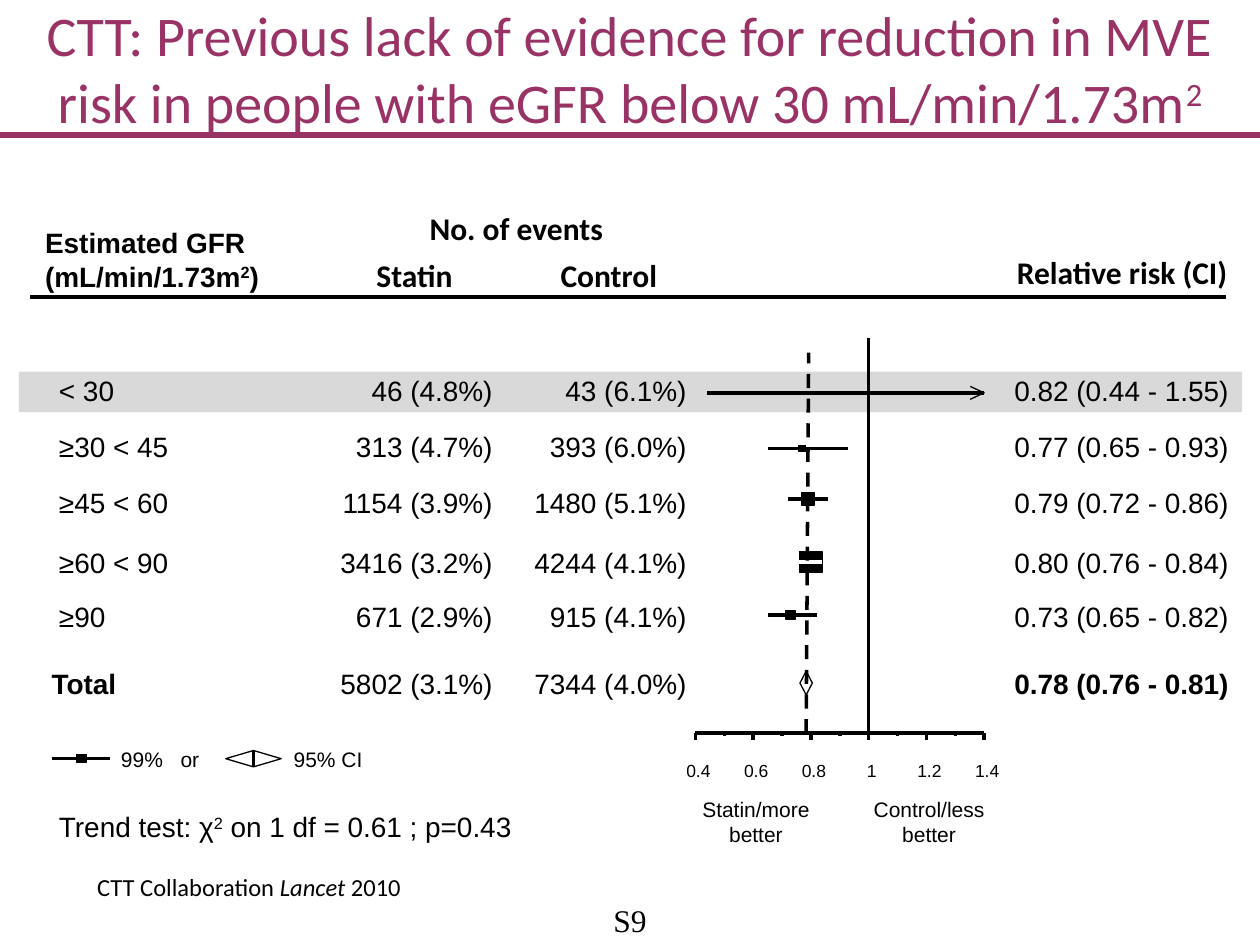
from collections import namedtuple

from lxml import etree
from pptx import Presentation
from pptx import util as u
from pptx.dml.color import RGBColor
from pptx.enum import dml, shapes, text
from pptx.oxml import ns

BLACK = RGBColor(0, 0, 0)
WHITE = RGBColor(0xFF, 0xFF, 0xFF)
PLUM = RGBColor(0x99, 0x33, 0x66)
GREY = RGBColor(0xD9, 0xD9, 0xD9)
LEFT, CENTER, RIGHT = text.PP_ALIGN.LEFT, text.PP_ALIGN.CENTER, text.PP_ALIGN.RIGHT

Box = namedtuple("Box", "x y w h")  # centimetres
# y is the text top within the table, mark_y the estimate's centre within the plot
Row = namedtuple("Row", "label statin control y rr low high mark_y mark")

ROWS = [
    Row("< 30", "46 (4.8%)", "43 (6.1%)", 0.05, 0.82, 0.44, 1.55, 1.11, (0.01, 0.05)),
    Row("≥30 < 45", "313 (4.7%)", "393 (6.0%)", 1.17, 0.77, 0.65, 0.93, 2.23, (0.13, 0.13)),
    Row("≥45 < 60", "1154 (3.9%)", "1480 (5.1%)", 2.29, 0.79, 0.72, 0.86, 3.25, (0.25, 0.25)),
    Row("≥60 < 90", "3416 (3.2%)", "4244 (4.1%)", 3.51, 0.80, 0.76, 0.84, 4.52, (0.45, 0.43)),
    Row("≥90", "671 (2.9%)", "915 (4.1%)", 4.6, 0.73, 0.65, 0.82, 5.59, (0.2, 0.16)),
    Row("Total", "5802 (3.1%)", "7344 (4.0%)", 5.95, 0.78, 0.76, 0.81, 6.96, (0.25, 0.48)),
]


def add_runs(p, runs, size, font="Arial", color=BLACK, bold=False):
    """Add (text, style) runs; style is "", "i" or "sup"."""
    for words, style in runs:
        r = p.add_run()
        r.text = words
        f = r.font
        f.name, f.size, f.bold = font, u.Pt(size), bold
        f.color.rgb = color
        if style == "i":
            f.italic = True
        elif style == "sup":
            r._r.get_or_add_rPr().set("baseline", "30000")


def add_text(s, x, y, w, h, content, size, align=LEFT, **style):
    """Add a text box; content is a string or a list of paragraphs of runs."""
    if isinstance(content, str):
        content = [[(content, "")]]
    sp = s.shapes.add_textbox(u.Cm(x), u.Cm(y), u.Cm(w), u.Cm(h))
    tf = sp.text_frame
    tf.word_wrap = True
    tf.margin_left = tf.margin_right = tf.margin_top = tf.margin_bottom = 0
    for i, runs in enumerate(content):
        p = tf.add_paragraph() if i else tf.paragraphs[0]
        p.alignment = align
        add_runs(p, runs, size, **style)
    return sp


def add_line(s, x1, y1, x2, y2, color=BLACK, width=0, dash=None):
    c = s.shapes.add_connector(shapes.MSO_CONNECTOR.STRAIGHT,
                               u.Cm(x1), u.Cm(y1), u.Cm(x2), u.Cm(y2))
    c.line.color.rgb = color
    c.line.width = u.Pt(width)
    if dash:
        c.line.dash_style = dash
    etree.SubElement(c._element.spPr, ns.qn("a:effectLst"))
    return c


def add_mark(s, cx, cy, size, kind=shapes.MSO_SHAPE.RECTANGLE, fill=BLACK):
    """Add a shape centred on a point."""
    w, h = size
    sp = s.shapes.add_shape(kind, u.Cm(cx - w / 2), u.Cm(cy - h / 2), u.Cm(w), u.Cm(h))
    sp.shadow.inherit = False
    sp.fill.solid()
    sp.fill.fore_color.rgb = fill
    sp.line.color.rgb = BLACK
    sp.line.width = 0
    return sp


def add_open_arrowhead(s, x, y, length=0.28, half=0.13):
    points = [(u.Cm(x), u.Cm(y)), (u.Cm(x - length), u.Cm(y - half))]
    fb = s.shapes.build_freeform(u.Cm(x - length), u.Cm(y + half))
    fb.add_line_segments(points, close=False)
    sp = fb.convert_to_shape()
    sp.shadow.inherit = False
    sp.fill.background()
    sp.line.color.rgb = BLACK
    sp.line.width = 0


def title(s, box):
    sp = s.shapes.title
    sp.left, sp.top, sp.width, sp.height = (u.Cm(v) for v in box)
    tf = sp.text_frame
    tf.auto_size = text.MSO_AUTO_SIZE.NONE
    tf.vertical_anchor = text.MSO_ANCHOR.MIDDLE
    p = tf.paragraphs[0]
    p.alignment = CENTER
    add_runs(p, [("CTT: Previous lack of evidence for reduction in MVE risk in people "
                  "with eGFR below 30 mL/min/1.73m", ""), ("2", "sup")], 32, "Calibri", PLUM)
    bottom = box.y + box.h
    add_line(s, box.x, bottom, box.x + box.w, bottom, PLUM, 3)


def column_heads(s, box):
    heads = [("No. of events", 8.05, 0.02, 3.53), ("Statin", 6.98, 0.96, 1.55),
             ("Control", 10.69, 0.96, 1.96), ("Relative risk (CI)", 19.89, 0.91, 4.29)]
    for words, dx, dy, w in heads:
        add_text(s, box.x + dx, box.y + dy, w + 0.1, 0.76, words, 18,
                 font="Calibri", bold=True)
    gfr = [[("Estimated GFR", "")], [("(mL/min/1.73m", ""), ("2", "sup"), (")", "")]]
    add_text(s, box.x + 0.3, box.y + 0.35, 4.6, 1.37, gfr, 16, bold=True)
    add_line(s, box.x, box.y + box.h, box.x + box.w, box.y + box.h)


def event_rows(s, box):
    band = add_mark(s, box.x + box.w / 2, box.y + 0.41, (box.w, 0.82), fill=GREY)
    band.line.fill.background()
    for row in ROWS:
        total = row is ROWS[-1]
        y = box.y + row.y
        add_text(s, box.x + (0.66 if total else 0.81), y, 2.6, 0.69, row.label, 16, bold=total)
        for words, right in ((row.statin, 9.55), (row.control, 13.46)):
            add_text(s, box.x + right - 3.2, y, 3.2, 0.69, words, 16, RIGHT)
        risk = f"{row.rr:.2f} ({row.low:.2f} - {row.high:.2f})"
        add_text(s, box.x + 20.07, y, 4.55, 0.69, risk, 16, bold=total)


def forest_plot(s, box, first=0.4, last=1.4):
    def at(value):
        return box.x + box.w * (value - first) / (last - first)

    base, right = box.y + box.h, box.x + box.w
    add_line(s, at(1), base, at(1), box.y)
    add_line(s, box.x, base, right, base)
    for i in range(11):
        value = first + i / 10
        major = i % 2 == 0
        add_line(s, at(value), base, at(value), base + (0.14 if major else 0.06))
        if major:
            add_text(s, at(value) - 0.44, base + 0.54, 1, 0.43, f"{value:.1g}" if i == 6
                     else f"{value:.1f}", 10, CENTER)
    for words, dx in (("Statin/more", 1.22), ("Control/less", 4.71)):
        add_text(s, box.x + dx - 1.3, base + 1.27, 2.6, 1.02,
                 [[(words, "")], [("better", "")]], 12, CENTER)

    for row in ROWS[:-1]:
        y = box.y + row.mark_y
        add_mark(s, at(row.rr), y, row.mark)
        add_line(s, at(row.low), y, min(at(row.high), right), y,
                 WHITE if row.mark[0] > 0.4 else BLACK)
        if row.high > last:
            add_open_arrowhead(s, right, y)
    total = ROWS[-1]
    add_mark(s, at(total.rr) + 0.02, box.y + total.mark_y, total.mark,
             shapes.MSO_SHAPE.DIAMOND, WHITE)
    add_line(s, at(total.rr) + 0.02, base, at(total.rr) + 0.07, box.y + 0.3,
             dash=dml.MSO_LINE.DASH)


def legend(s, box):
    y = box.y + box.h / 2
    add_mark(s, box.x + 0.6, y, (0.2, 0.16))
    add_line(s, box.x, y, box.x + 1.17, y)
    sp = add_text(s, box.x + 1.4, box.y, 1.8, box.h, "99%\tor", 12)
    tabs = etree.SubElement(sp.text_frame.paragraphs[0]._p.get_or_add_pPr(), ns.qn("a:tabLst"))
    etree.SubElement(tabs, ns.qn("a:tab"), pos=str(u.Cm(1.2)), algn="l")
    diamond = add_mark(s, box.x + 4.07, y, (1.12, 0.33), shapes.MSO_SHAPE.DIAMOND, WHITE)
    c = add_line(s, box.x + 4.07, y - 0.16, box.x + 4.07, y + 0.16)
    c.begin_connect(diamond, 0)
    c.end_connect(diamond, 2)
    add_text(s, box.x + 4.88, box.y, 1.6, box.h, "95% CI", 12)


def footer(s, box):
    trend = [("Trend test: χ", ""), ("2", "sup"), (" on 1 df = 0.61 ; p=0.43", "")]
    add_text(s, box.x, box.y, 9.93, 0.75, [trend], 16)
    source = [("CTT Collaboration ", ""), ("Lancet", "i"), (" 2010", "")]
    add_text(s, box.x + 0.77, box.y + 1.25, 14.7, 0.62, [source], 14, font="Calibri")
    add_text(s, box.x + box.w / 2 - 0.6, box.y + 1.83, 1.2, 0.76, "S9", 18, CENTER,
             font="Times New Roman")


def main():
    prs = Presentation()
    prs.slide_width, prs.slide_height = u.Cm(25.4), u.Cm(19.05)
    s = prs.slides.add_slide(prs.slide_layouts[5])
    title(s, Box(0, 0, 25.4, 2.72))
    column_heads(s, Box(0.61, 4.2, 24.1, 1.79))
    event_rows(s, Box(0.38, 7.49, 24.66, 6.7))
    forest_plot(s, Box(14.02, 6.81, 5.82, 7.97))
    legend(s, Box(1.04, 15.04, 6.3, 0.51))
    footer(s, Box(1.19, 16.33, 23.02, 2.6))
    prs.save("out.pptx")


if __name__ == "__main__":
    main()
